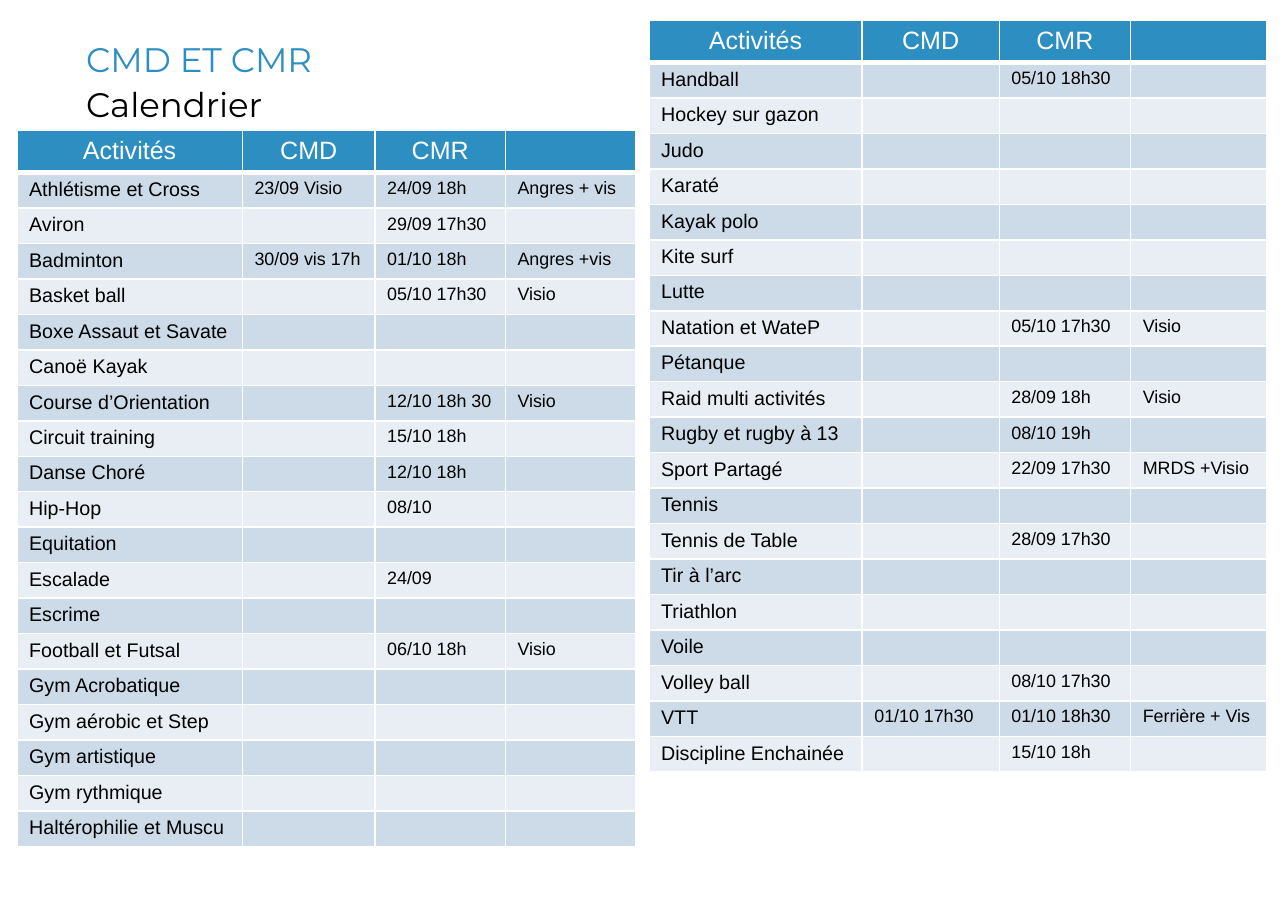
from lxml import etree
from pptx import Presentation
from pptx.dml.color import RGBColor
from pptx.enum import text
from pptx.oxml.ns import qn
from pptx.util import Pt

THEME = {
    "blue": "2D8EC2", "white": "FFFFFF", "black": "000000",
    "bands": ("CDDBE9", "E8EEF4"),
    "title_font": "Montserrat", "table_font": "Arial",
    "title": 19, "header": 14, "activity": 11, "date": 10,
}

TITLES = [("CMD ET CMR", "blue", 21.6), ("Calendrier", "black", 46.8)]
TITLE_LEFT, TITLE_W, TITLE_H = 48.2, 623.5, 25.2

HEADER = ("Activités", "CMD", "CMR", "")
HEADER_H, ROW_H = 22.6, 19.48
MARGIN_X, MARGIN_Y = 6.8, 3.3

# Rows list activity, CMD, CMR and place; missing trailing cells are empty.
TABLES = [
    {"left": 9.5, "top": 73, "cols": (126, 74.2, 72.9, 72.7), "rows": [
        ("Athlétisme et Cross", "23/09 Visio", "24/09 18h", "Angres + vis"),
        ("Aviron", "", "29/09 17h30"),
        ("Badminton", "30/09 vis 17h", "01/10 18h", "Angres +vis"),
        ("Basket ball", "", "05/10 17h30", "Visio"),
        ("Boxe Assaut et Savate",),
        ("Canoë Kayak",),
        ("Course d’Orientation", "", "12/10 18h 30", "Visio"),
        ("Circuit training", "", "15/10 18h"),
        ("Danse Choré", "", "12/10 18h"),
        ("Hip-Hop", "", "08/10"),
        ("Equitation",),
        ("Escalade", "", "24/09"),
        ("Escrime",),
        ("Football et Futsal", "", "06/10 18h", "Visio"),
        ("Gym Acrobatique",),
        ("Gym aérobic et Step",),
        ("Gym artistique",),
        ("Gym rythmique",),
        ("Haltérophilie et Muscu",),
    ]},
    {"left": 362.8, "top": 11.5, "cols": (119.2, 76.6, 73.5, 76.2), "rows": [
        ("Handball", "", "05/10 18h30"),
        ("Hockey sur gazon",),
        ("Judo",),
        ("Karaté",),
        ("Kayak polo",),
        ("Kite surf",),
        ("Lutte",),
        ("Natation et WateP", "", "05/10 17h30", "Visio"),
        ("Pétanque",),
        ("Raid multi activités", "", "28/09 18h", "Visio"),
        ("Rugby et rugby à 13", "", "08/10 19h"),
        ("Sport Partagé", "", "22/09 17h30", "MRDS +Visio"),
        ("Tennis",),
        ("Tennis de Table", "", "28/09 17h30"),
        ("Tir à l’arc",),
        ("Triathlon",),
        ("Voile",),
        ("Volley ball", "", "08/10 17h30"),
        ("VTT", "01/10 17h30", "01/10 18h30", "Ferrière + Vis"),
        ("Discipline Enchainée", "", "15/10 18h"),
    ]},
]


def rgb(value):
    return RGBColor.from_string(value)


def style_text(p, font, size, color):
    for r in p.runs:
        r.font.name, r.font.size = font, Pt(size)
        r.font.bold = False
        r.font.color.rgb = rgb(color)
    if not p.runs:  # an empty cell must not grow to the default text size
        etree.SubElement(p._p, qn("a:endParaRPr"), sz=str(size * 100))


def add_title(s, words, color, top):
    sp = s.shapes.add_textbox(Pt(TITLE_LEFT), Pt(top), Pt(TITLE_W), Pt(TITLE_H))
    tf = sp.text_frame
    tf.word_wrap = True
    tf.margin_left = tf.margin_right = tf.margin_top = tf.margin_bottom = 0
    tf.text = words
    style_text(tf.paragraphs[0], THEME["title_font"], THEME["title"], THEME[color])


def add_borders(cell, widths):
    """Draw white borders; widths maps the sides L, R, T, B to points."""
    tc_pr = cell._tc.get_or_add_tcPr()
    for i, (side, width) in enumerate(widths.items()):
        ln = etree.Element(qn("a:ln" + side), w=str(Pt(width)))
        fill = etree.SubElement(ln, qn("a:solidFill"))
        etree.SubElement(fill, qn("a:srgbClr"), val=THEME["white"])
        tc_pr.insert(i, ln)


def fill_cell(cell, words, row, col):
    header = row == 0
    cell.margin_left = cell.margin_right = Pt(MARGIN_X)
    cell.margin_top = cell.margin_bottom = Pt(MARGIN_Y)
    cell.text_frame.text = words
    p = cell.text_frame.paragraphs[0]
    if header:
        p.alignment = text.PP_ALIGN.CENTER
    size = "header" if header else "date" if col else "activity"
    style_text(p, THEME["table_font"], THEME[size],
               THEME["white" if header else "black"])
    cell.fill.solid()
    cell.fill.fore_color.rgb = rgb(
        THEME["blue"] if header else THEME["bands"][(row - 1) % 2])
    add_borders(cell, {"L": 1, "R": 1, "T": 3 if row == 1 else 1,
                       "B": 3 if header else 1})


def add_calendar(s, left, top, cols, rows):
    lines = [HEADER] + rows
    height = HEADER_H + ROW_H * len(rows)
    table = s.shapes.add_table(len(lines), len(cols), Pt(left), Pt(top),
                               Pt(sum(cols)), Pt(height)).table
    for column, width in zip(table.columns, cols):
        column.width = Pt(width)
    for i, line in enumerate(lines):
        table.rows[i].height = Pt(ROW_H if i else HEADER_H)
        for j in range(len(cols)):
            fill_cell(table.cell(i, j), line[j] if j < len(line) else "", i, j)


def main():
    prs = Presentation()
    prs.slide_width, prs.slide_height = Pt(720), Pt(509)
    s = prs.slides.add_slide(prs.slide_layouts[6])
    for title in TITLES:
        add_title(s, *title)
    for calendar in TABLES:
        add_calendar(s, **calendar)
    prs.save("out.pptx")


if __name__ == "__main__":
    main()
